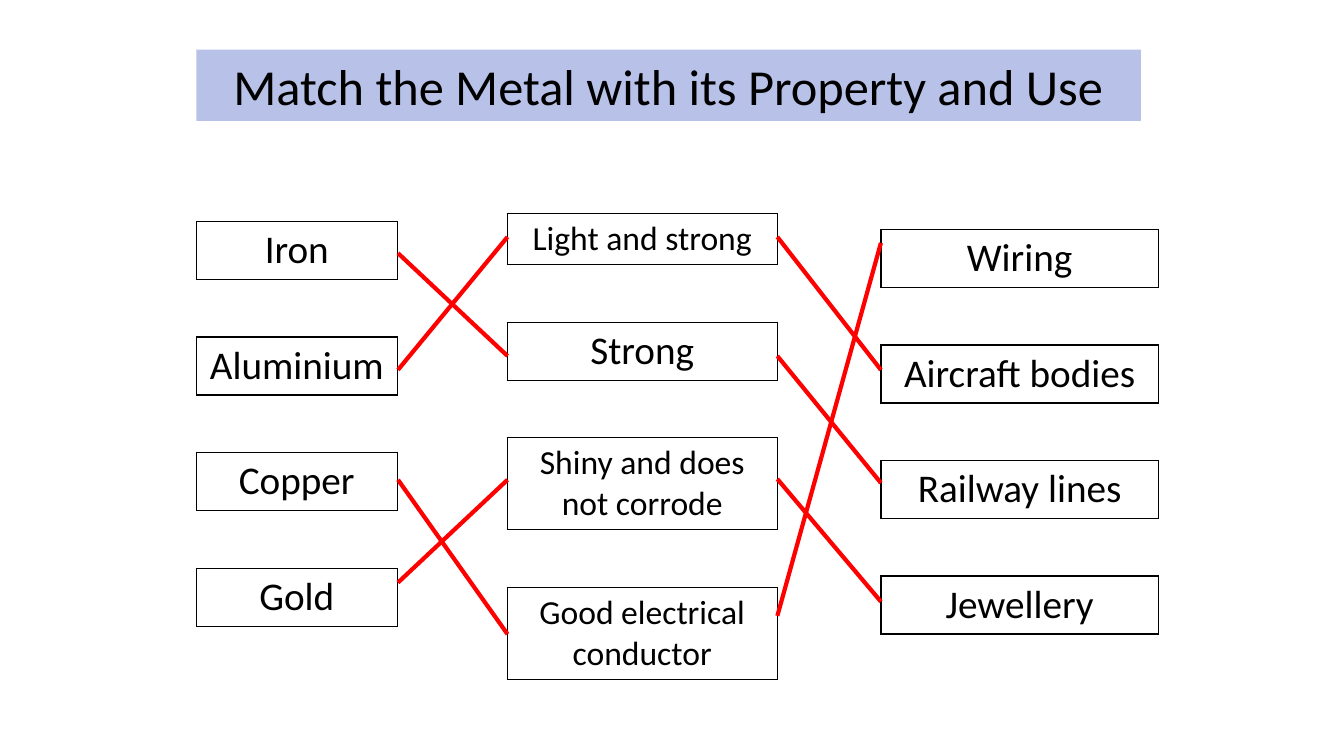
from lxml.etree import SubElement
from pptx import Presentation
from pptx.dml.color import RGBColor
from pptx.enum.shapes import MSO_CONNECTOR as CONNECTOR, MSO_SHAPE as SHAPE
from pptx.enum.text import MSO_ANCHOR as ANCHOR, PP_ALIGN as ALIGN
from pptx.oxml.ns import qn
from pptx.util import Cm, Pt

BLACK, RED, LAVENDER = "000000", "FF0000", "B8C2E9"
GAP_HEIGHT = 1.45

METALS = [("Iron", 28, 1.45), ("Aluminium", 28, 1.45), ("Copper", 28, 1.45), ("Gold", 28, 1.45)]
PROPERTIES = [("Light and strong", 24, 1.27), ("Strong", 28, 1.45),
              ("Shiny and does not corrode", 24, 2.3), ("Good electrical conductor", 24, 2.3)]
USES = [("Wiring", 28, 1.45), ("Aircraft bodies", 28, 1.45),
        ("Railway lines", 28, 1.45), ("Jewellery", 28, 1.45)]

METAL_TO_PROPERTY = [(0.8, 3.39), (3.74, 0.39), (6.51, 10.4), (9.1, 6.51)]
PROPERTY_TO_USE = [(3.39, 6.59), (0.39, 3.74), (6.49, 9.58), (9.94, 0.54)]


def color(hex_code):
    """Turn a hex string into a colour."""
    return RGBColor.from_string(hex_code)


def write(text_frame, wording, size):
    """Put centred black Calibri text into a text frame."""
    paragraph = text_frame.paragraphs[0]
    paragraph.text = wording
    paragraph.alignment = ALIGN.CENTER
    font = paragraph.runs[0].font
    font.name, font.size, font.bold = "Calibri", Pt(size), False
    font.color.rgb = color(BLACK)


def set_borders(cell, drawn_sides):
    """Draw the given sides of a cell in black and hide the others."""
    properties = cell._tc.get_or_add_tcPr()
    for side in "LRTB":
        border = SubElement(properties, qn(f"a:ln{side}"), w=str(Pt(1)))
        if side in drawn_sides:
            fill = SubElement(border, qn("a:solidFill"))
            SubElement(fill, qn("a:srgbClr"), val=BLACK)
        else:
            SubElement(border, qn("a:noFill"))
    cell.fill.background()


def add_title(slide, left, top, width, height):
    """Add the heading band."""
    band = slide.shapes.add_shape(SHAPE.RECTANGLE, Cm(left), Cm(top), Cm(width), Cm(height))
    band.shadow.inherit = False
    band.fill.solid()
    band.fill.fore_color.rgb = color(LAVENDER)
    band.line.fill.background()
    band.text_frame.word_wrap = True
    band.text_frame.vertical_anchor = ANCHOR.MIDDLE
    write(band.text_frame, "Match the Metal with its Property and Use", 36)


def add_word_column(slide, words, left, top, width):
    """Add a one-column table with an open row between its boxed words."""
    row_count = 2 * len(words) - 1
    total = sum(height for *_, height in words) + GAP_HEIGHT * (len(words) - 1)
    table = slide.shapes.add_table(row_count, 1, Cm(left), Cm(top), Cm(width), Cm(total)).table
    table.first_row = table.horz_banding = False
    for index in range(row_count):
        cell = table.cell(index, 0)
        if index % 2:
            table.rows[index].height = Cm(GAP_HEIGHT)
            set_borders(cell, "TB")
        else:
            wording, size, height = words[index // 2]
            table.rows[index].height = Cm(height)
            set_borders(cell, "LRTB")
            write(cell.text_frame, wording, size)


def add_matches(slide, matches, left, top, width):
    """Join both sides of a gap with red lines, given by their end heights."""
    for start, end in matches:
        match = slide.shapes.add_connector(
            CONNECTOR.STRAIGHT, Cm(left), Cm(top + start), Cm(left + width), Cm(top + end))
        match.line.color.rgb = color(RED)
        match.line.width = Pt(3)
        SubElement(match._element.spPr, qn("a:effectLst"))


def main():
    """Build the matching exercise and save it."""
    deck = Presentation()
    deck.slide_width, deck.slide_height = Cm(33.87), Cm(19.05)
    slide = deck.slides.add_slide(deck.slide_layouts[6])
    add_title(slide, 4.95, 1.25, 23.8, 1.8)
    add_word_column(slide, METALS, 4.95, 5.58, 5.06)
    add_word_column(slide, PROPERTIES, 12.78, 5.38, 6.81)
    add_word_column(slide, USES, 22.2, 5.78, 6.99)
    add_matches(slide, METAL_TO_PROPERTY, 10.03, 5.58, 2.76)
    add_matches(slide, PROPERTY_TO_USE, 19.59, 5.58, 2.61)
    deck.save("out.pptx")


if __name__ == "__main__":
    main()
